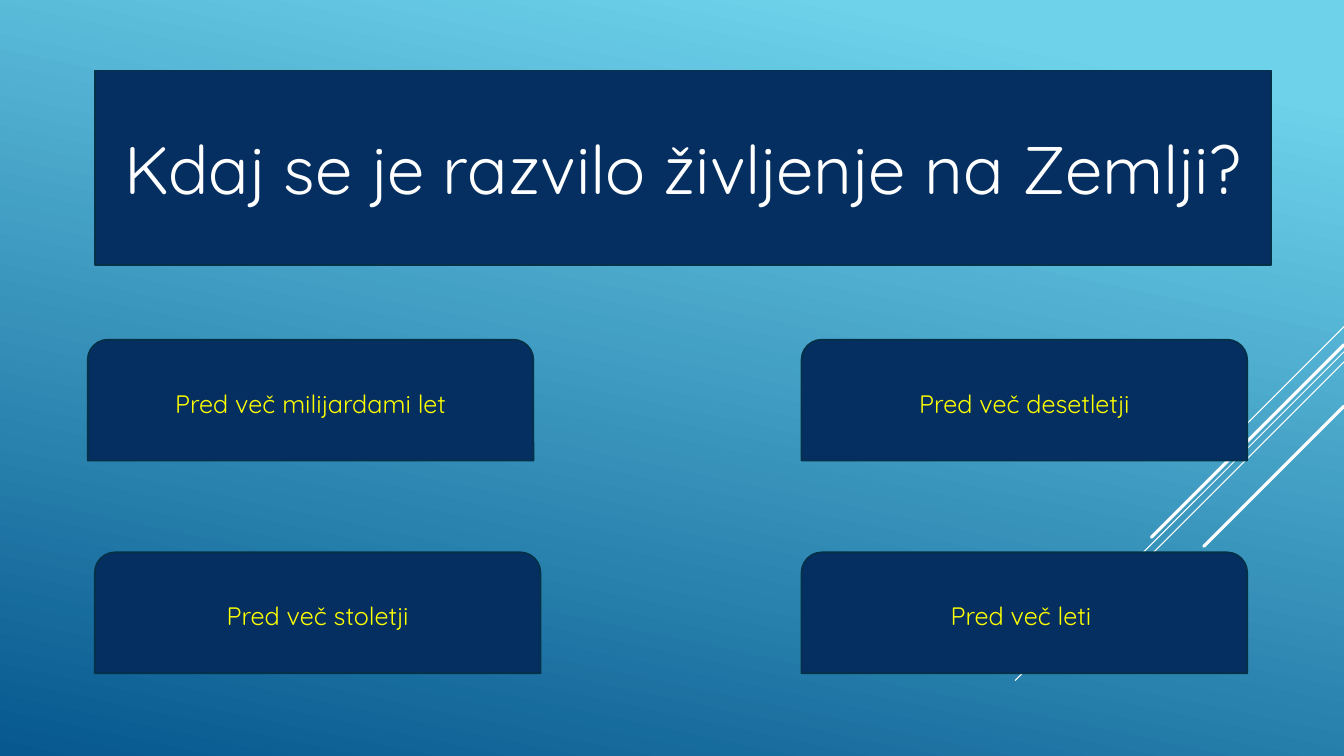
from lxml.etree import SubElement
from pptx import Presentation
from pptx.dml.color import RGBColor
from pptx.enum.shapes import MSO_CONNECTOR, MSO_SHAPE
from pptx.enum.text import MSO_ANCHOR, PP_ALIGN
from pptx.oxml.ns import qn
from pptx.util import Inches, Pt

WIDTH, HEIGHT = 13.33, 7.5
COLORS = {
    "sky": "6ED2EB",
    "deep": "06588E",
    "navy": "052F61",
    "edge": "043148",
    "white": "FFFFFF",
    "yellow": "FFFF00",
}
BACKGROUND_STOPS = [(0.1, "sky"), (1.0, "deep")]
BACKGROUND_ANGLE = 258

RAYS = [
    (3.24, 1.0, 0.75),
    (3.49, 3.26, 0.75),
    (3.59, 2.07, 0.75),
    (3.42, 1.91, 2.25),
    (4.03, 1.39, 2.25),
]

QUESTION = "Kdaj se je razvilo življenje na Zemlji?"
QUESTION_BOX = (0.94, 0.7, 11.67, 1.93)
QUESTION_FORMAT = {"size": Pt(48), "name": "Quicksand"}
ANSWER_FORMAT = {"size": Pt(18), "name": "Quicksand"}
ANSWER_SIZE = (4.42, 1.2)
RIGHT_COLUMN = 7.95
ANSWER_ROWS = [
    (3.37, [(0.87, "Pred več milijardami let"), (RIGHT_COLUMN, "Pred več desetletji")]),
    (5.48, [(0.94, "Pred več stoletji"), (RIGHT_COLUMN, "Pred več leti ")]),
]


def color(name):
    return RGBColor.from_string(COLORS[name])


def paint_background(slide):
    fill = slide.background.fill
    fill.gradient()
    fill.gradient_angle = BACKGROUND_ANGLE
    for stop, (position, name) in zip(fill.gradient_stops, BACKGROUND_STOPS):
        stop.position = position
        stop.color.rgb = color(name)


def add_ray(slide, top, reach, weight):
    ends = (WIDTH, top, WIDTH - reach, top + reach)
    connector = slide.shapes.add_connector(
        MSO_CONNECTOR.STRAIGHT, *(Inches(value) for value in ends)
    )
    connector.line.color.rgb = color("white")
    connector.line.width = Pt(weight)
    connector.line._get_or_add_ln().set("cap", "rnd")
    SubElement(connector._element.spPr, qn("a:effectLst"))


def add_panel(slide, kind, box, text, text_color, text_format):
    shape = slide.shapes.add_shape(kind, *(Inches(value) for value in box))
    shape.shadow.inherit = False
    shape.fill.solid()
    shape.fill.fore_color.rgb = color("navy")
    shape.line.color.rgb = color("edge")
    shape.line.width = Pt(1.25)
    frame = shape.text_frame
    frame.word_wrap = True
    frame.vertical_anchor = MSO_ANCHOR.MIDDLE
    paragraph = frame.paragraphs[0]
    paragraph.alignment = PP_ALIGN.CENTER
    run = paragraph.add_run()
    run.text = text
    run.font.color.rgb = color(text_color)
    for attribute, value in text_format.items():
        setattr(run.font, attribute, value)


def main():
    presentation = Presentation()
    presentation.slide_width = Inches(WIDTH)
    presentation.slide_height = Inches(HEIGHT)
    slide = presentation.slides.add_slide(presentation.slide_layouts[6])
    paint_background(slide)
    for ray in RAYS:
        add_ray(slide, *ray)
    add_panel(slide, MSO_SHAPE.RECTANGLE, QUESTION_BOX, QUESTION, "white", QUESTION_FORMAT)
    for top, answers in ANSWER_ROWS:
        for left, answer in answers:
            box = (left, top, *ANSWER_SIZE)
            add_panel(
                slide, MSO_SHAPE.ROUND_2_SAME_RECTANGLE, box, answer, "yellow", ANSWER_FORMAT
            )
    presentation.save("out.pptx")


if __name__ == "__main__":
    main()
